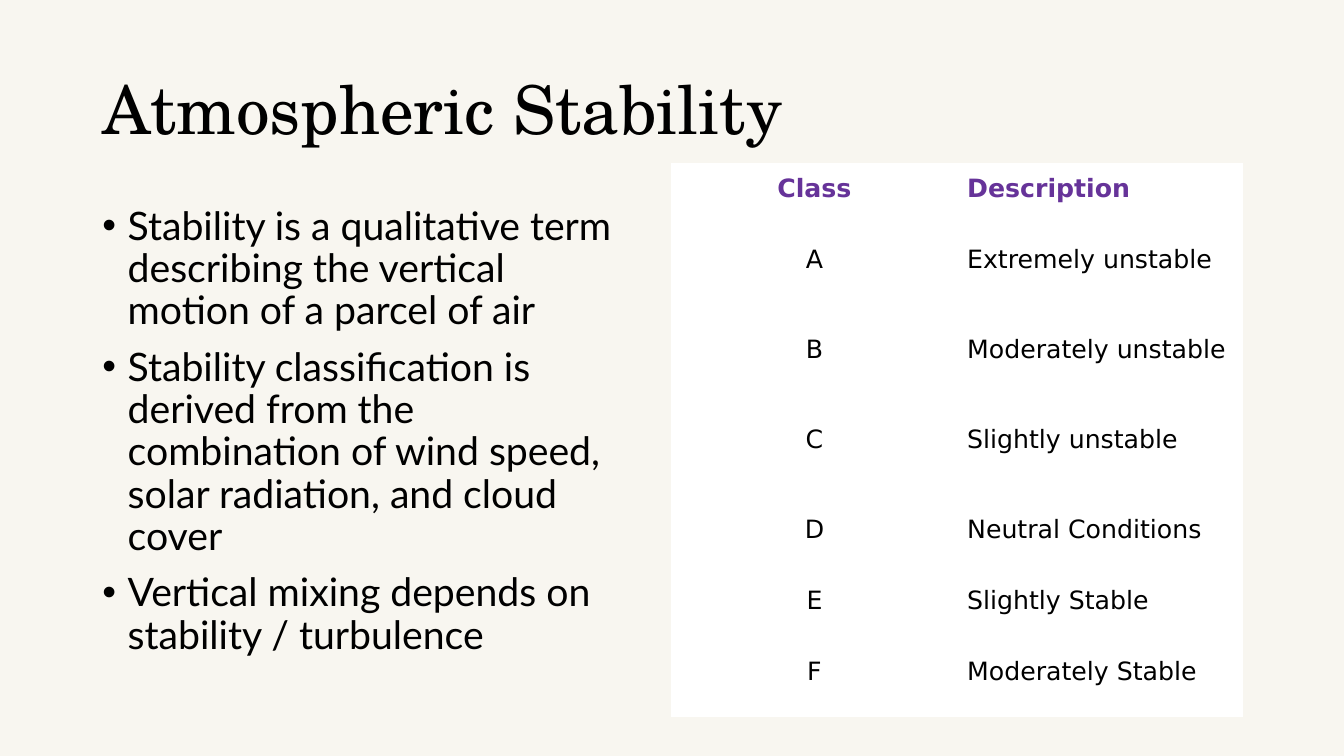
from lxml.etree import SubElement
from pptx import Presentation
from pptx.dml.color import RGBColor
from pptx.enum.text import MSO_ANCHOR, PP_ALIGN
from pptx.oxml.ns import qn
from pptx.util import Cm, Pt

TITLE = "Atmospheric Stability"
POINTS = [
    "Stability is a qualitative term describing the vertical motion of a parcel of air",
    "Stability classification is derived from the combination of wind speed, "
    "solar radiation, and cloud cover",
    "Vertical mixing depends on stability / turbulence",
]
CLASSES = [
    ("Class", "Description"),
    ("A", "Extremely unstable"),
    ("B", "Moderately unstable"),
    ("C", "Slightly unstable"),
    ("D", "Neutral Conditions"),
    ("E", "Slightly Stable"),
    ("F", "Moderately Stable"),
]
COLORS = {"back": "F8F6F0", "text": "000000", "header": "663399", "cell": "FFFFFF"}
SHORT, TALL = 1.3, 2.27
SHORT_ROWS = ("Class", "E")
COL_W = 7.19


def write(p, text, font, size, color="text", bold=False, align=PP_ALIGN.LEFT,
          spacing=None, before=0, bullet=False):
    p.alignment = align
    p.line_spacing = spacing
    p.space_before = Pt(before)
    if bullet:
        pPr = p._p.get_or_add_pPr()
        pPr.set("marL", str(Cm(0.64)))
        pPr.set("indent", str(-Cm(0.64)))
        SubElement(pPr, qn("a:buFont"), typeface="Arial")
        SubElement(pPr, qn("a:buChar"), char="•")
    r = p.add_run()
    r.text = text
    r.font.name = font
    r.font.size = Pt(size)
    r.font.bold = bold
    r.font.color.rgb = RGBColor.from_string(COLORS[color])


def text_box(s, left, top, width, height, anchor):
    tf = s.shapes.add_textbox(Cm(left), Cm(top), Cm(width), Cm(height)).text_frame
    tf.word_wrap = True
    tf.vertical_anchor = anchor
    return tf


prs = Presentation()
prs.slide_width, prs.slide_height = Cm(33.87), Cm(19.05)
s = prs.slides.add_slide(prs.slide_layouts[6])
s.background.fill.solid()
s.background.fill.fore_color.rgb = RGBColor.from_string(COLORS["back"])

tf = text_box(s, 2.33, 1.01, 29.21, 3.68, MSO_ANCHOR.MIDDLE)
write(tf.paragraphs[0], TITLE, "TeX Gyre Schola", 48, spacing=0.9)

tf = text_box(s, 2.33, 5.07, 13.65, 12.09, MSO_ANCHOR.TOP)
for i, point in enumerate(POINTS):
    p = tf.add_paragraph() if i else tf.paragraphs[0]
    write(p, point, "Lato", 28, spacing=0.9, before=10 if i else 0, bullet=True)

heights = [SHORT if name in SHORT_ROWS else TALL for name, _ in CLASSES]
table = s.shapes.add_table(len(CLASSES), 2, Cm(16.93), Cm(4.11),
                           Cm(2 * COL_W), Cm(sum(heights))).table
for col in table.columns:
    col.width = Cm(COL_W)
for i, (row, height) in enumerate(zip(CLASSES, heights)):
    table.rows[i].height = Cm(height)
    for j, text in enumerate(row):
        cell = table.cell(i, j)
        cell.fill.solid()
        cell.fill.fore_color.rgb = RGBColor.from_string(COLORS["cell"])
        cell.vertical_anchor = MSO_ANCHOR.MIDDLE
        write(cell.text_frame.paragraphs[0], text, "DejaVu Sans", 18,
              color="text" if i else "header", bold=i == 0,
              align=PP_ALIGN.LEFT if j else PP_ALIGN.CENTER)

prs.save("out.pptx")
